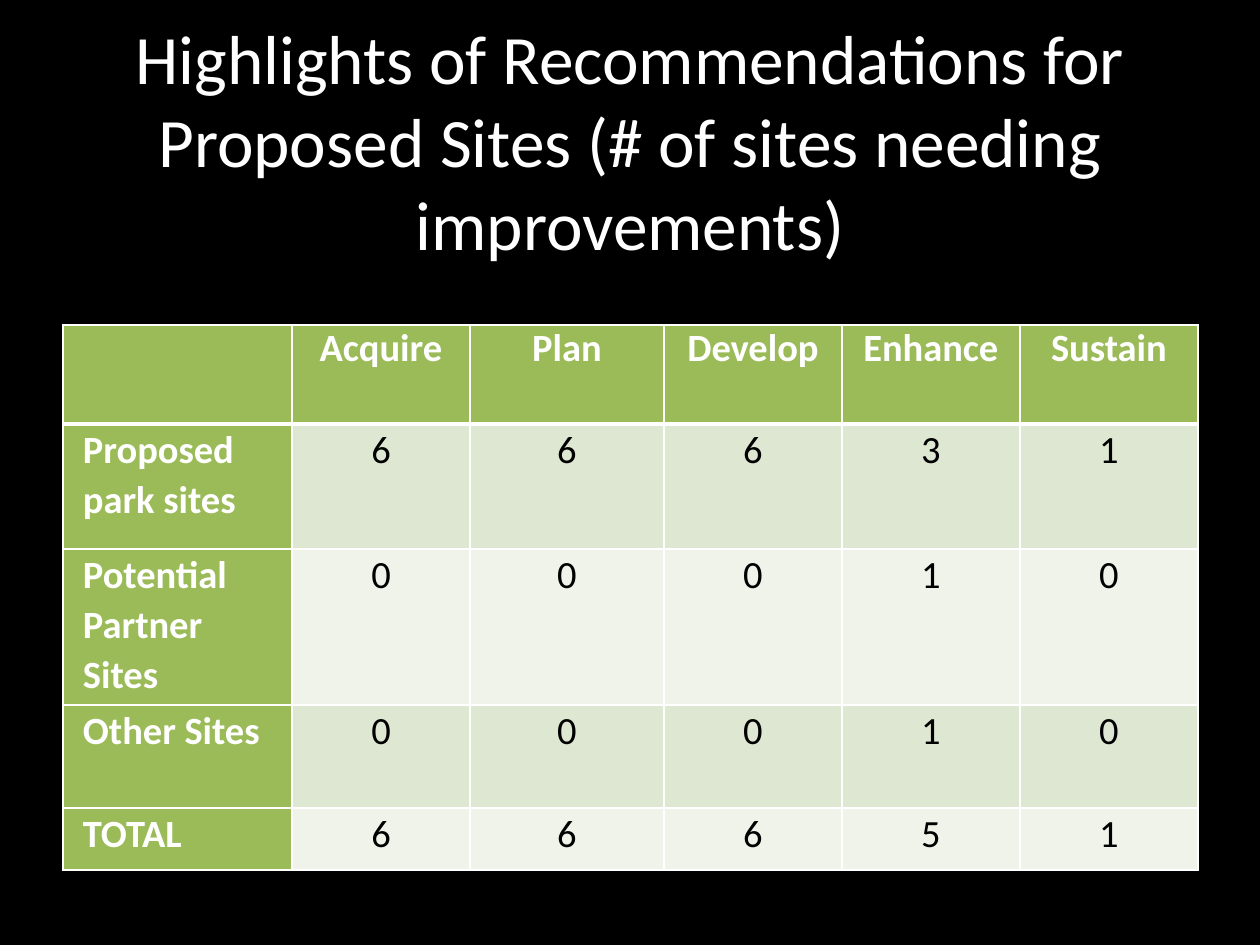
"""Build the slide with site recommendations by type of action."""
import pptx
import pptx.dml.color
import pptx.enum.text
import pptx.oxml
import pptx.oxml.ns
import pptx.util

ALIGN = pptx.enum.text.PP_ALIGN
ANCHOR = pptx.enum.text.MSO_ANCHOR
EMU_PER_PX = 914400 / 126
BLACK, WHITE, GREEN = "000000", "FFFFFF", "9BBB59"
BANDS = ("DEE7D1", "EFF3EA")

TITLE = "Highlights of Recommendations for Proposed Sites (# of sites needing improvements)"
COLUMN_WIDTHS = (229, 178, 194, 178, 178, 178)
ROW_HEIGHTS = (99, 125, 156, 103, 62)
ROWS = (
    ("", "Acquire", "Plan", "Develop", "Enhance", "Sustain"),
    ("Proposed park sites", "6", "6", "6", "3", "1"),
    ("Potential Partner Sites", "0", "0", "0", "1", "0"),
    ("Other Sites", "0", "0", "0", "1", "0"),
    ("TOTAL", "6", "6", "6", "5", "1"),
)


def px(length):
    return pptx.util.Emu(round(length * EMU_PER_PX))


def color(value):
    return pptx.dml.color.RGBColor.from_string(value)


def write_text(frame, text, *, font, size, fill, bold=False, align=ALIGN.CENTER, spacing=None):
    paragraph = frame.paragraphs[0]
    paragraph.alignment = align
    paragraph.line_spacing = spacing
    run = paragraph.add_run()
    run.text = text
    run.font.name = font
    run.font.size = pptx.util.Pt(size)
    run.font.bold = bold
    run.font.color.rgb = color(fill)


def add_border(cell, side, points):
    cell._tc.get_or_add_tcPr().append(pptx.oxml.parse_xml(
        f'<a:ln{side} {pptx.oxml.ns.nsdecls("a")} w="{pptx.util.Pt(points)}">'
        f'<a:solidFill><a:srgbClr val="{WHITE}"/></a:solidFill></a:ln{side}>'))


class SlideBuilder:
    def __init__(self, slide, font="Calibri"):
        self.slide = slide
        self.font = font

    def background(self, fill):
        self.slide.background.fill.solid()
        self.slide.background.fill.fore_color.rgb = color(fill)

    def title(self, text, left, top, width, height):
        shape = self.slide.shapes.title
        shape.left, shape.top, shape.width, shape.height = map(px, (left, top, width, height))
        frame = shape.text_frame
        frame.word_wrap = True
        frame.auto_size = pptx.enum.text.MSO_AUTO_SIZE.NONE
        frame.vertical_anchor = ANCHOR.MIDDLE
        write_text(frame, text, font=self.font, size=39.6, fill=WHITE)

    def table(self, rows, left, top, widths, heights):
        shape = self.slide.shapes.add_table(
            len(rows), len(widths), px(left), px(top), px(sum(widths)), px(sum(heights)))
        table = shape.table
        table.horz_banding = False
        for column, width in zip(table.columns, widths):
            column.width = px(width)
        for row, height in zip(table.rows, heights):
            row.height = px(height)
        for row_index, row in enumerate(rows):
            for column_index, text in enumerate(row):
                self.cell(table.cell(row_index, column_index), text, row_index, column_index)

    def cell(self, cell, text, row_index, column_index):
        is_header = row_index == 0
        is_label = column_index == 0
        is_heading = is_header or is_label
        cell.margin_left = cell.margin_right = px(20)
        cell.margin_top = cell.margin_bottom = 0
        cell.vertical_anchor = ANCHOR.TOP
        for side in "LR":
            add_border(cell, side, 1)
        add_border(cell, "T", 3 if row_index == 1 else 1)
        add_border(cell, "B", 3 if is_header else 1)
        cell.fill.solid()
        cell.fill.fore_color.rgb = color(GREEN if is_heading else BANDS[(row_index - 1) % 2])
        if text:
            write_text(cell.text_frame, text, font=self.font, size=22,
                       fill=WHITE if is_heading else BLACK, bold=is_heading,
                       align=ALIGN.LEFT if is_label else ALIGN.CENTER,
                       spacing=None if is_header else 1.07)


def main():
    presentation = pptx.Presentation()
    presentation.slide_width, presentation.slide_height = px(1260), px(945)
    builder = SlideBuilder(presentation.slides.add_slide(presentation.slide_layouts[5]))
    builder.background(BLACK)
    builder.title(TITLE, 63, 38, 1134, 204)
    builder.table(ROWS, 63, 325, COLUMN_WIDTHS, ROW_HEIGHTS)
    presentation.save("out.pptx")


if __name__ == "__main__":
    main()
